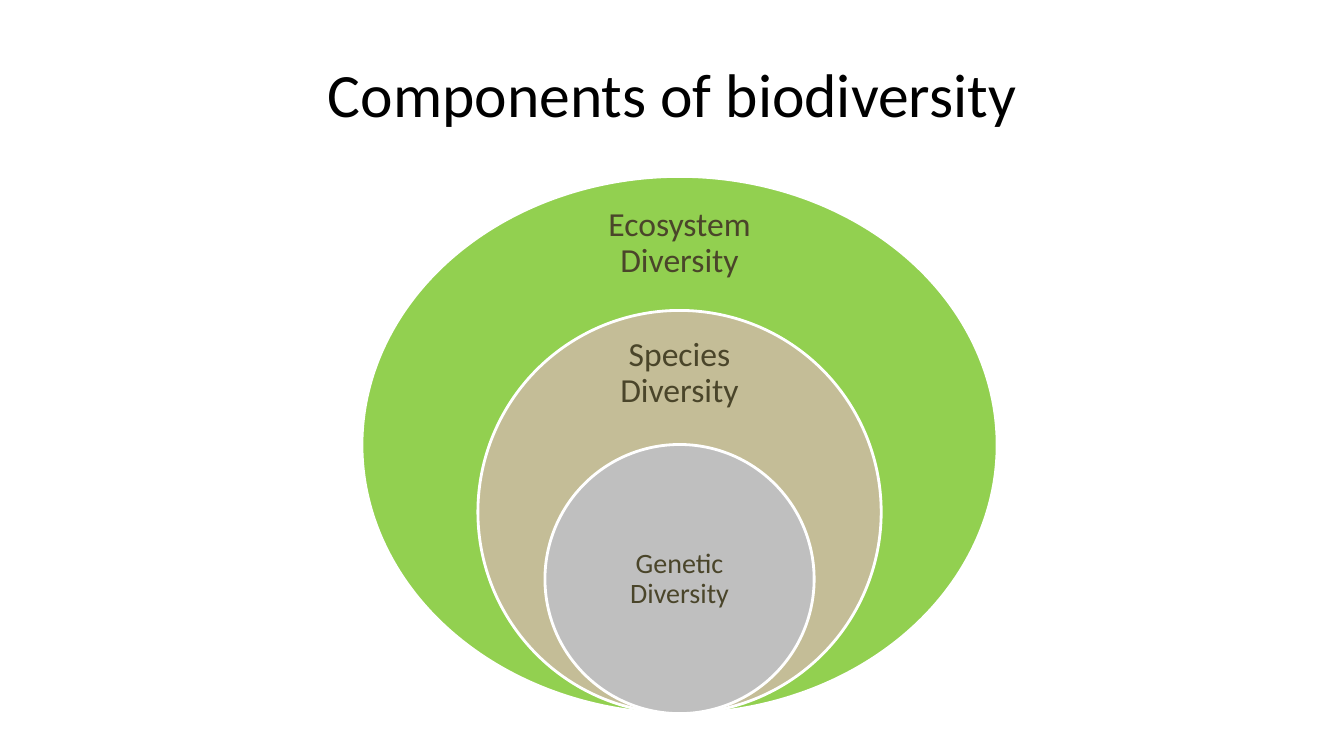
from pptx import Presentation
from pptx.dml.color import RGBColor
from pptx.enum.shapes import MSO_SHAPE
from pptx.enum.text import MSO_ANCHOR, PP_ALIGN
from pptx.util import Inches, Pt

OVAL = MSO_SHAPE.OVAL
MIDDLE = MSO_ANCHOR.MIDDLE
CENTER = PP_ALIGN.CENTER
TITLE_ONLY = 5
FONT = "Calibri"
COLORS = {
    "title": "000000",
    "label": "4A452A",
    "outline": "FFFFFF",
    "ecosystem": "92D050",
    "species": "C4BD97",
    "genetic": "BFBFBF",
}
# name, color, ellipse width, ellipse height, label offset, width, height, size
RINGS = [
    ("Ecosystem Diversity", "ecosystem", 6.3, 5.33, 0.27, 2.2, 0.8, 24),
    ("Species Diversity", "species", 4, 4, 0.25, 1.86, 0.75, 24),
    ("Genetic Diversity", "genetic", 2.67, 2.67, 0.67, 1.89, 1.33, 20),
]


def rgb(name):
    return RGBColor.from_string(COLORS[name])


def write(tf, text, size, color):
    tf.word_wrap = True
    tf.vertical_anchor = MIDDLE
    p = tf.paragraphs[0]
    p.text = text
    p.alignment = CENTER
    p.font.name = FONT
    p.font.size = Pt(size)
    p.font.color.rgb = rgb(color)
    return p


def add_title(slide, left, top, width, height):
    sp = slide.shapes.title
    sp.left, sp.top = Inches(left), Inches(top)
    sp.width, sp.height = Inches(width), Inches(height)
    write(sp.text_frame, "Components of biodiversity", 44, "title")


def add_rings(slide, left, top, width, height):
    center = left + width / 2
    bottom = top + height
    for text, color, w, h, offset, label_w, label_h, size in RINGS:
        ring_top = bottom - h
        sp = slide.shapes.add_shape(OVAL, Inches(center - w / 2), Inches(ring_top),
                                    Inches(w), Inches(h))
        sp.shadow.inherit = False
        sp.fill.solid()
        sp.fill.fore_color.rgb = rgb(color)
        sp.line.color.rgb = rgb("outline")
        sp.line.width = Pt(2)

        label = slide.shapes.add_textbox(Inches(center - label_w / 2),
                                         Inches(ring_top + offset),
                                         Inches(label_w), Inches(label_h))
        tf = label.text_frame
        tf.margin_left = tf.margin_right = Inches(0.19)
        tf.margin_top = tf.margin_bottom = 0
        p = write(tf, text, size, "label")
        p.line_spacing = 0.9


def main():
    prs = Presentation()
    prs.slide_width, prs.slide_height = Inches(13.33), Inches(7.5)
    slide = prs.slides.add_slide(prs.slide_layouts[TITLE_ONLY])
    add_title(slide, 0.67, 0.3, 12, 1.25)
    add_rings(slide, 3.59, 1.75, 6.3, 5.33)
    prs.save("out.pptx")


if __name__ == "__main__":
    main()
